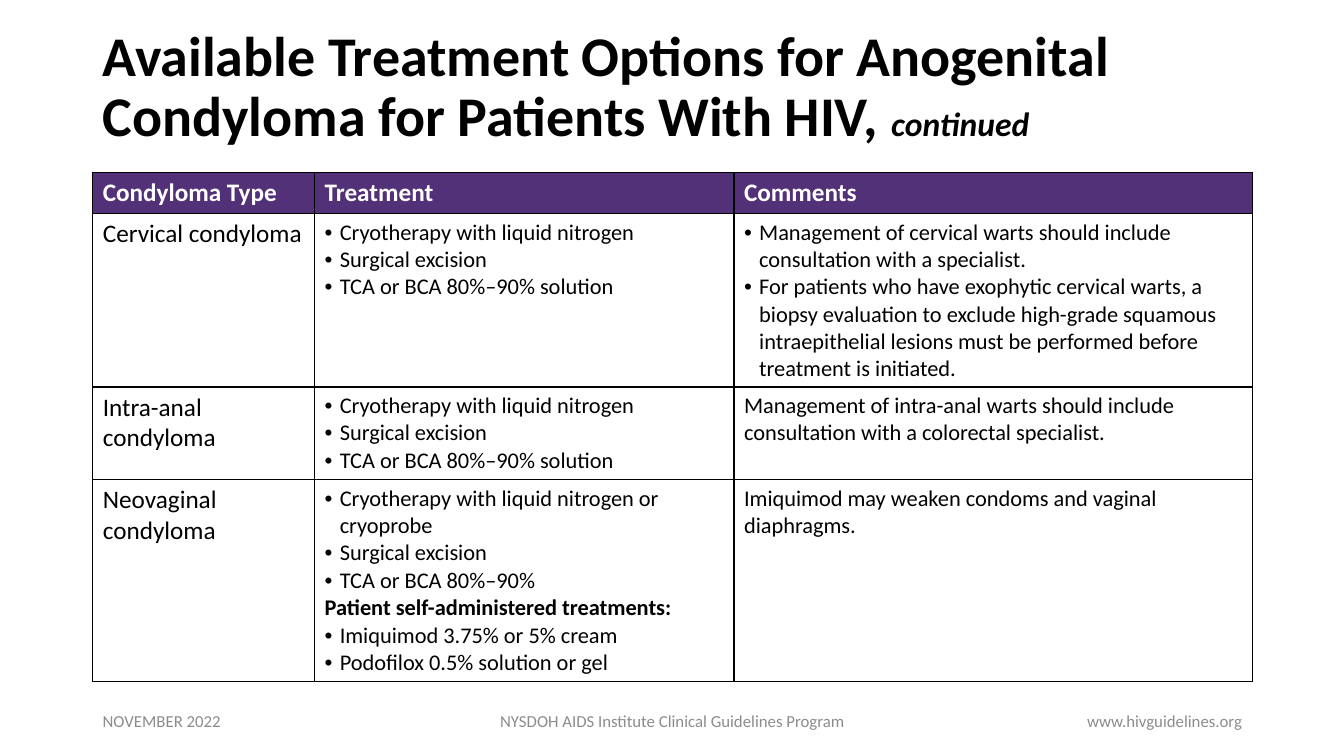
from lxml import etree
from pptx import Presentation
from pptx.dml.color import RGBColor
from pptx.enum.text import MSO_ANCHOR, PP_ALIGN
from pptx.oxml.ns import qn
from pptx.util import Pt

LEFT, CENTER, RIGHT = PP_ALIGN.LEFT, PP_ALIGN.CENTER, PP_ALIGN.RIGHT
MIDDLE = MSO_ANCHOR.MIDDLE
PX = 9144
THEME = {
    "font": "Calibri",
    "ink": "000000", "white": "FFFFFF", "purple": "523178", "gray": "8C8C8C",
    "title": 40, "continued": 24, "label": 18, "body": 16, "footer": 12,
}


def add_text(p, text, size, color="ink", bold=False, italic=False, align=LEFT, bullet=False):
    if bullet:
        pPr = p._p.get_or_add_pPr()
        pPr.set("marL", str(15 * PX))
        pPr.set("indent", str(-15 * PX))
        etree.SubElement(pPr, qn("a:buFont")).set("typeface", "Arial")
        etree.SubElement(pPr, qn("a:buChar")).set("char", "•")
    p.alignment = align
    r = p.add_run()
    r.text = text
    f = r.font
    f.name, f.size, f.bold, f.italic = THEME["font"], Pt(THEME[size]), bold, italic
    f.color.rgb = RGBColor.from_string(THEME[color])


def add_box(s, x, y, w, h):
    tf = s.shapes.add_textbox(x * PX, y * PX, w * PX, h * PX).text_frame
    tf.word_wrap = True
    tf.vertical_anchor = MIDDLE
    return tf.paragraphs[0]


prs = Presentation()
prs.slide_width, prs.slide_height = 1333 * PX, 750 * PX
s = prs.slides.add_slide(prs.slide_layouts[6])

p = add_box(s, 92, 15, 1063, 145)
p.line_spacing = 0.9
add_text(p, "Available Treatment Options for Anogenital Condyloma for Patients With HIV, ",
         "title", bold=True)
add_text(p, "continued", "continued", bold=True, italic=True)

HEADERS = ["Condyloma Type", "Treatment", "Comments"]
CLINIC = ["• Cryotherapy with liquid nitrogen", "• Surgical excision",
          "• TCA or BCA 80%–90% solution"]
CONDYLOMAS = [
    (["Cervical condyloma"], CLINIC,
     ["• Management of cervical warts should include consultation with a specialist.",
      "• For patients who have exophytic cervical warts, a biopsy evaluation to exclude "
      "high-grade squamous intraepithelial lesions must be performed before treatment is "
      "initiated."]),
    (["Intra-anal condyloma"], CLINIC,
     ["Management of intra-anal warts should include consultation with a colorectal "
      "specialist."]),
    (["Neovaginal condyloma"],
     ["• Cryotherapy with liquid nitrogen or cryoprobe", "• Surgical excision",
      "• TCA or BCA 80%–90%", "Patient self-administered treatments:",
      "• Imiquimod 3.75% or 5% cream", "• Podofilox 0.5% solution or gel"],
     ["Imiquimod may weaken condoms and vaginal diaphragms."]),
]
COL_WIDTHS = [220, 416, 514]
ROW_HEIGHTS = [41, 172, 92, 200]

table = s.shapes.add_table(len(ROW_HEIGHTS), len(COL_WIDTHS), 92 * PX, 171 * PX,
                           sum(COL_WIDTHS) * PX, sum(ROW_HEIGHTS) * PX).table
table.horz_banding = False
for col, w in zip(table.columns, COL_WIDTHS):
    col.width = w * PX
for row, h in zip(table.rows, ROW_HEIGHTS):
    row.height = h * PX

rows = [[[header] for header in HEADERS], *CONDYLOMAS]
for i, row in enumerate(rows):
    for j, lines in enumerate(row):
        cell = table.cell(i, j)
        tcPr = cell._tc.get_or_add_tcPr()
        for side in ("lnL", "lnR", "lnT", "lnB"):
            ln = etree.SubElement(tcPr, qn(f"a:{side}"), w=str(Pt(1)))
            fill = etree.SubElement(ln, qn("a:solidFill"))
            etree.SubElement(fill, qn("a:srgbClr"), val=THEME["ink"])
        if i == 0:
            cell.fill.solid()
            cell.fill.fore_color.rgb = RGBColor.from_string(THEME["purple"])
        else:
            cell.fill.background()
        tf = cell.text_frame
        for k, line in enumerate(lines):
            p = tf.add_paragraph() if k else tf.paragraphs[0]
            add_text(p, line.removeprefix("• "),
                     "label" if i == 0 or j == 0 else "body",
                     color="white" if i == 0 else "ink",
                     bold=i == 0 or line.endswith(":"),
                     bullet=line.startswith("•"))

FOOTERS = [
    (92, 300, "NOVEMBER 2022", LEFT),
    (442, 450, "NYSDOH AIDS Institute Clinical Guidelines Program", CENTER),
    (942, 300, "www.hivguidelines.org", RIGHT),
]
for x, w, text, align in FOOTERS:
    add_text(add_box(s, x, 695, w, 40), text, "footer", color="gray", align=align)

prs.save("out.pptx")
